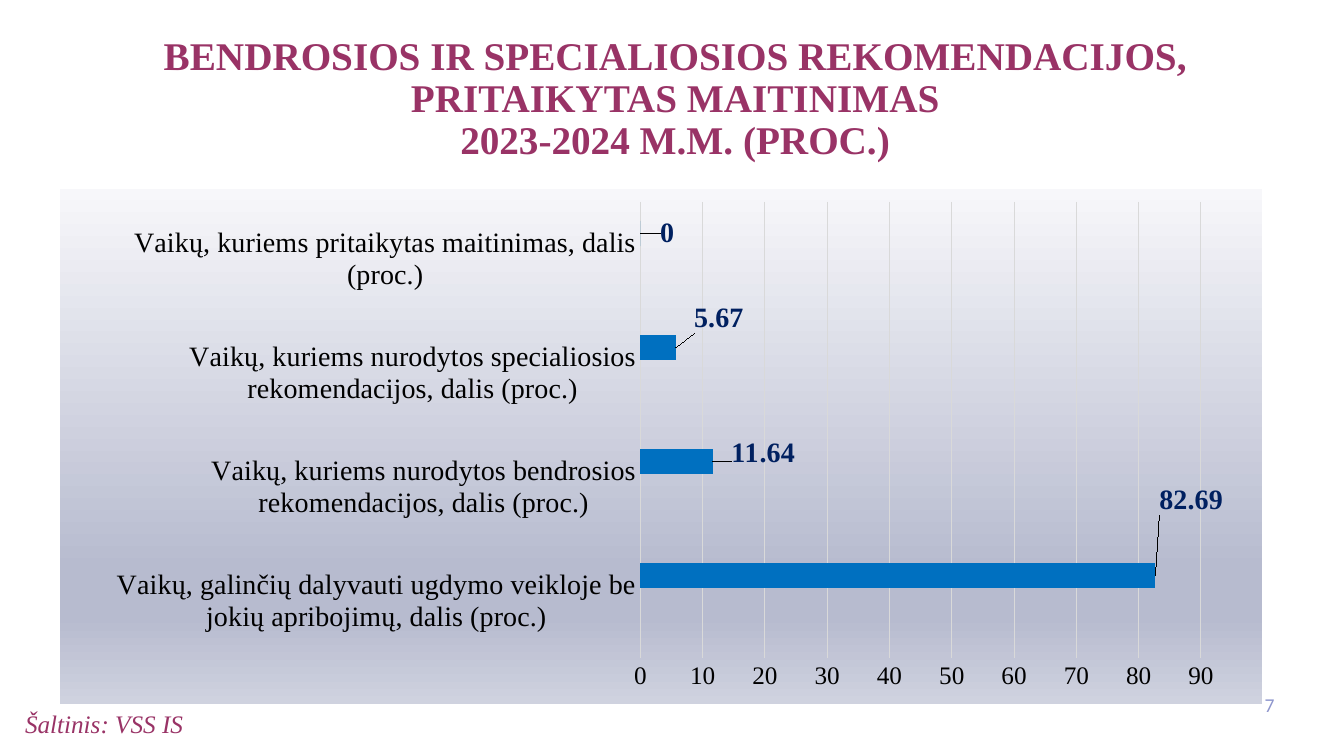
from lxml import etree
from pptx import Presentation
from pptx.chart.data import CategoryChartData
from pptx.dml.color import RGBColor
from pptx.enum.chart import XL_CHART_TYPE as ChartType
from pptx.enum.chart import XL_LABEL_POSITION as LabelPosition
from pptx.enum.chart import XL_TICK_MARK as TickMark
from pptx.enum.text import MSO_ANCHOR as Anchor
from pptx.enum.text import MSO_AUTO_SIZE as AutoSize
from pptx.enum.text import PP_ALIGN as Align
from pptx.oxml import parse_xml
from pptx.oxml.ns import nsdecls, qn
from pptx.util import Inches, Pt

COLORS = {
    "plum": "993366", "number": "8E96CD", "black": "000000", "grid": "D9D9D9",
    "first": "8D95CC", "second": "2E34D0", "bar": "0070C0", "label": "002060",
}
SERIF = "Times New Roman"
BACKDROP = [(0, "F7F7FA"), (74, "B7BBCF"), (83, "B7BBCF"), (100, "CFD2DF")]
PLOT_AREA = {"x": 0.483, "y": 0.026, "w": 0.466, "h": 0.886}
SHARES = [
    ("Vaikų, galinčių dalyvauti ugdymo veikloje be jokių apribojimų, dalis (proc.)",
     82.69, (0, -0.147)),
    ("Vaikų, kuriems nurodytos bendrosios rekomendacijos, dalis (proc.)",
     11.64, (0.012, -0.016)),
    ("Vaikų, kuriems nurodytos specialiosios rekomendacijos, dalis (proc.)",
     5.67, (0.012, -0.058)),
    ("Vaikų, kuriems pritaikytas maitinimas, dalis (proc.)", 0, (0.013, 0)),
]


def style_font(font, color, **formats):
    font.color.rgb = RGBColor.from_string(COLORS[color])
    for name, value in formats.items():
        setattr(font, name, value)


def place(shape, left, top, width, height):
    for name, value in zip(("left", "top", "width", "height"), (left, top, width, height)):
        setattr(shape, name, Inches(value))


def fill_text(box, text, color, align, anchor, **formats):
    frame = box.text_frame
    frame.word_wrap = True
    frame.auto_size = AutoSize.NONE
    frame.vertical_anchor = anchor
    para = frame.paragraphs[0]
    para.alignment = align
    for index, line in enumerate(text.split("\n")):
        if index:
            para.add_line_break()
        span = para.add_run()
        span.text = line
        style_font(span.font, color, **formats)
    return para


def add_text(page, bounds, *content, **formats):
    box = page.shapes.add_textbox(*map(Inches, bounds))
    fill_text(box, *content, **formats)


def manual_layout(modes, sizes):
    layout = etree.Element(qn("c:layout"))
    manual = etree.SubElement(layout, qn("c:manualLayout"))
    for name, value in {**modes, **sizes}.items():
        etree.SubElement(manual, qn(f"c:{name}")).set("val", str(value))
    return layout


def fill_backdrop(chart):
    stops = "".join(
        f'<a:gs pos="{position * 1000}"><a:srgbClr val="{color}"/></a:gs>'
        for position, color in BACKDROP)
    backdrop = parse_xml(
        f'<c:spPr {nsdecls("c", "a")}><a:gradFill><a:gsLst>{stops}</a:gsLst>'
        '<a:lin ang="5400000" scaled="0"/></a:gradFill><a:ln><a:noFill/></a:ln></c:spPr>')
    chart.element.find(qn("c:chart")).addnext(backdrop)


def set_plot_area(chart):
    area = chart.element.find(qn("c:chart")).find(qn("c:plotArea"))
    for layout in area.findall(qn("c:layout")):
        area.remove(layout)
    modes = {"layoutTarget": "inner", "xMode": "edge", "yMode": "edge"}
    area.insert(0, manual_layout(modes, PLOT_AREA))


def style_axis(axis, size):
    axis.major_tick_mark = axis.minor_tick_mark = TickMark.NONE
    axis.format.line.fill.background()
    style_font(axis.tick_labels.font, "black", size=Pt(size), name=SERIF)


def label_bars(series):
    for index, (_, _, (across, down)) in enumerate(SHARES):
        label = series.points[index].data_label
        style_font(label.font, "label", size=Pt(20), bold=True, name=SERIF)
        label.position = LabelPosition.OUTSIDE_END
    tags = series.data_labels.show_value = True
    style_font(series.data_labels.font, "label", size=Pt(20), bold=tags, name=SERIF)
    marks = series.data_labels._element.findall(qn("c:dLbl"))
    for mark, (_, _, (across, down)) in zip(marks, SHARES):
        mark.find(qn("c:idx")).addnext(manual_layout({}, {"x": across, "y": down}))


def add_share_chart(page):
    data = CategoryChartData()
    data.categories = [name for name, _, _ in SHARES]
    empty = [None] * len(SHARES)
    data.add_series("Series 1", empty)
    data.add_series("Series 2", empty)
    data.add_series("Series 3", [value for _, value, _ in SHARES])
    bounds = map(Inches, (0.59, 1.87, 11.93, 5.11))
    chart = page.shapes.add_chart(ChartType.BAR_CLUSTERED, *bounds, data).chart
    chart.has_title = chart.has_legend = False
    style_font(chart.font, "black", size=Pt(10), name="Calibri")
    plot = chart.plots[0]
    for name, value in {"gap_width": 150, "overlap": 0, "vary_by_categories": False}.items():
        setattr(plot, name, value)
    for series, color in zip(plot.series, ("first", "second", "bar")):
        series.format.fill.solid()
        series.format.fill.fore_color.rgb = RGBColor.from_string(COLORS[color])
    label_bars(plot.series[2])
    style_axis(chart.category_axis, 20)
    style_axis(chart.value_axis, 18)
    scale = {"minimum_scale": 0, "maximum_scale": 90, "major_unit": 10,
             "has_major_gridlines": True}
    for name, value in scale.items():
        setattr(chart.value_axis, name, value)
    grid = chart.value_axis.major_gridlines.format.line
    grid.color.rgb = RGBColor.from_string(COLORS["grid"])
    grid.width = Pt(0.75)
    set_plot_area(chart)
    fill_backdrop(chart)


def add_title(page):
    title = page.shapes.title
    place(title, 0.15, 0.31, 13.09, 1.56)
    para = fill_text(
        title,
        "BENDROSIOS IR SPECIALIOSIOS REKOMENDACIJOS,\n"
        "PRITAIKYTAS MAITINIMAS\n2023-2024 M.M. (PROC.)",
        "plum", Align.CENTER, Anchor.TOP, size=Pt(28), bold=True, name=SERIF)
    para.line_spacing = 0.9


def main():
    deck = Presentation()
    deck.slide_width, deck.slide_height = Inches(13.33), Inches(7.5)
    page = deck.slides.add_slide(deck.slide_layouts[5])
    add_title(page)
    add_text(page, (0.15, 6.98, 6.3, 0.38), "Šaltinis: VSS IS", "plum",
             Align.LEFT, Anchor.TOP, size=Pt(18), italic=True, name=SERIF)
    add_text(page, (12.22, 6.79, 0.52, 0.4), "7", "number",
             Align.RIGHT, Anchor.MIDDLE, size=Pt(14), name="Calibri")
    add_share_chart(page)
    deck.save("out.pptx")


if __name__ == "__main__":
    main()
